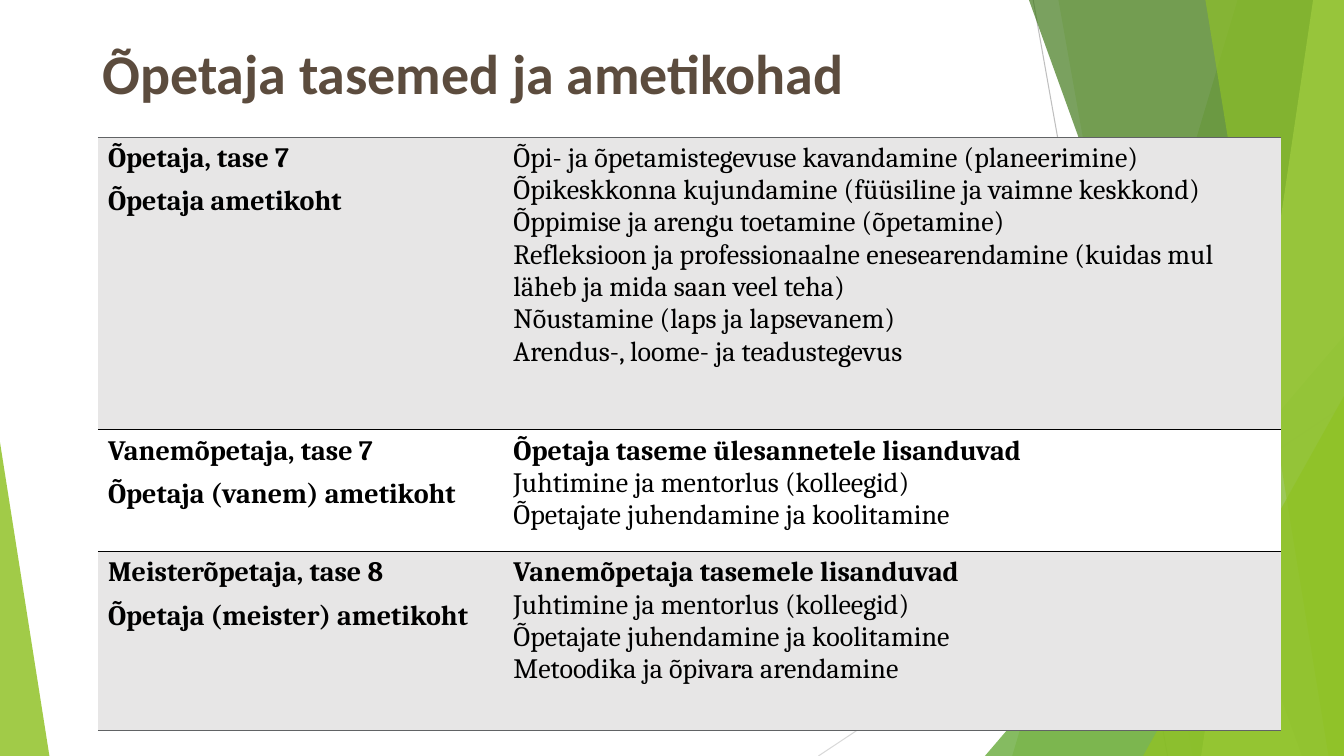
from lxml import etree
from pptx import Presentation, util as u
from pptx.dml.color import RGBColor
from pptx.enum import shapes, text
from pptx.oxml.ns import qn

WIDTH, HEIGHT = 960, 540
TITLE = "Õpetaja tasemed ja ametikohad"

# Each row: height, fill, level lines, heading of the duties, duties
ROWS = [
    (209, "E7E6E6", ["Õpetaja, tase 7", "Õpetaja ametikoht"], None,
     ["Õpi- ja õpetamistegevuse kavandamine (planeerimine)",
      "Õpikeskkonna kujundamine (füüsiline ja vaimne keskkond)",
      "Õppimise ja arengu toetamine (õpetamine)",
      "Refleksioon ja professionaalne enesearendamine (kuidas mul läheb ja mida saan veel teha)",
      "Nõustamine (laps ja lapsevanem)",
      "Arendus-, loome- ja teadustegevus"]),
    (87, "FFFFFF", ["Vanemõpetaja, tase 7", "Õpetaja (vanem) ametikoht"],
     "Õpetaja taseme ülesannetele lisanduvad",
     ["Juhtimine ja mentorlus (kolleegid)",
      "Õpetajate juhendamine ja koolitamine"]),
    (128, "E7E6E6", ["Meisterõpetaja, tase 8", "Õpetaja (meister) ametikoht"],
     "Vanemõpetaja tasemele lisanduvad",
     ["Juhtimine ja mentorlus (kolleegid)",
      "Õpetajate juhendamine ja koolitamine",
      "Metoodika ja õpivara arendamine"]),
]
COLUMNS = [289.6, 555.6]
# Rules above, between and below the rows
RULES = ["616365", "000000", "000000", "616365"]

# Thin lines: x1, y1, x2, y2, colour
LINES = [(738, 0, 834, HEIGHT, "BFBFBF"), (WIDTH, 290, 584.6, HEIGHT, "D8D8D8")]
# Bands reach the right edge: top x, bottom x. Triangles stand on the bottom
# edge: left, top, width, apex. Both end with colour and opacity in percent.
BACKDROP = [
    ("band", (884, 723), "90C226", 29),
    ("band", (756, 852), "90C226", 20),
    ("triangle", (703.5, 240, 256.5, 1), "54A021", 71),
    ("band", (735, 929.5), "3F7818", 69),
    ("band", (938, 858), "BFE471", 69),
    ("band", (861, 949), "90C226", 64),
    ("triangle", (816.5, 283, 143.5, 1), "90C226", 80),
    ("triangle", (0, 316, 35.3, 0), "90C226", 84),
]


def color(value):
    return RGBColor.from_string(value)


def paint(shape, fill, opacity):
    shape.shadow.inherit = False
    shape.line.fill.background()
    shape.fill.solid()
    shape.fill.fore_color.rgb = color(fill)
    node = shape.fill._xPr.find(".//" + qn("a:srgbClr"))
    etree.SubElement(node, qn("a:alpha"), val=str(opacity * 1000))


def add_band(slide, top_x, bottom_x):
    builder = slide.shapes.build_freeform(top_x, 0, scale=u.Pt(1))
    builder.add_line_segments([(WIDTH, 0), (WIDTH, HEIGHT), (bottom_x, HEIGHT)])
    return builder.convert_to_shape()


def add_triangle(slide, left, top, width, apex):
    shape = slide.shapes.add_shape(
        shapes.MSO_SHAPE.ISOSCELES_TRIANGLE,
        u.Pt(left), u.Pt(top), u.Pt(width), u.Pt(HEIGHT - top))
    shape.adjustments[0] = apex
    return shape


def set_borders(cell, top, bottom):
    properties = cell._tc.get_or_add_tcPr()
    borders = [("a:lnL", None), ("a:lnR", None), ("a:lnT", top), ("a:lnB", bottom)]
    for index, (tag, value) in enumerate(borders):
        line = etree.Element(qn(tag), w=str(u.Pt(1)))
        if value:
            fill = etree.SubElement(line, qn("a:solidFill"))
            etree.SubElement(fill, qn("a:srgbClr"), val=value)
        else:
            etree.SubElement(line, qn("a:noFill"))
        properties.insert(index, line)


def write_cell(cell, lines, gap=0):
    """Fill a cell with (wording, bold) lines, gap points apart."""
    frame = cell.text_frame
    for index, (wording, bold) in enumerate(lines):
        paragraph = frame.add_paragraph() if index else frame.paragraphs[0]
        paragraph.text = wording
        paragraph.space_before = u.Pt(gap if index else 0)
        font = paragraph.font
        font.name, font.size, font.bold = "Cambria", u.Pt(20), bold
        font.color.rgb = color("000000")


presentation = Presentation()
presentation.slide_width, presentation.slide_height = u.Pt(WIDTH), u.Pt(HEIGHT)
slide = presentation.slides.add_slide(presentation.slide_layouts[5])

# Backdrop
for x1, y1, x2, y2, value in LINES:
    line = slide.shapes.add_connector(
        shapes.MSO_CONNECTOR.STRAIGHT, u.Pt(x1), u.Pt(y1), u.Pt(x2), u.Pt(y2))
    line.line.color.rgb = color(value)
    line.line.width = u.Pt(0.75)
    etree.SubElement(line._element.spPr, qn("a:effectLst"))
for kind, place, fill, opacity in BACKDROP:
    add = add_band if kind == "band" else add_triangle
    paint(add(slide, *place), fill, opacity)

# Title
title = slide.shapes.title
title.left, title.top, title.width, title.height = map(u.Pt, (66, 22, 688, 65))
title.text_frame.text = TITLE
title.text_frame.vertical_anchor = text.MSO_ANCHOR.MIDDLE
paragraph = title.text_frame.paragraphs[0]
paragraph.alignment = text.PP_ALIGN.LEFT
paragraph.line_spacing = 0.9
paragraph.font.name, paragraph.font.size, paragraph.font.bold = "Calibri", u.Pt(40), True
paragraph.font.color.rgb = color("5C4C3E")

# Table of levels and duties
table = slide.shapes.add_table(
    len(ROWS), len(COLUMNS), u.Pt(70), u.Pt(98),
    u.Pt(sum(COLUMNS)), u.Pt(sum(row[0] for row in ROWS))).table
table.first_row = table.horz_banding = False
for column, width in zip(table.columns, COLUMNS):
    column.width = u.Pt(width)
for index, (height, fill, levels, heading, duties) in enumerate(ROWS):
    row = table.rows[index]
    row.height = u.Pt(height)
    write_cell(row.cells[0], [(level, True) for level in levels], gap=8)
    headings = [(heading, True)] if heading else []
    write_cell(row.cells[1], headings + [(duty, False) for duty in duties])
    for cell in row.cells:
        cell.fill.solid()
        cell.fill.fore_color.rgb = color(fill)
        set_borders(cell, RULES[index], RULES[index + 1])

presentation.save("out.pptx")
